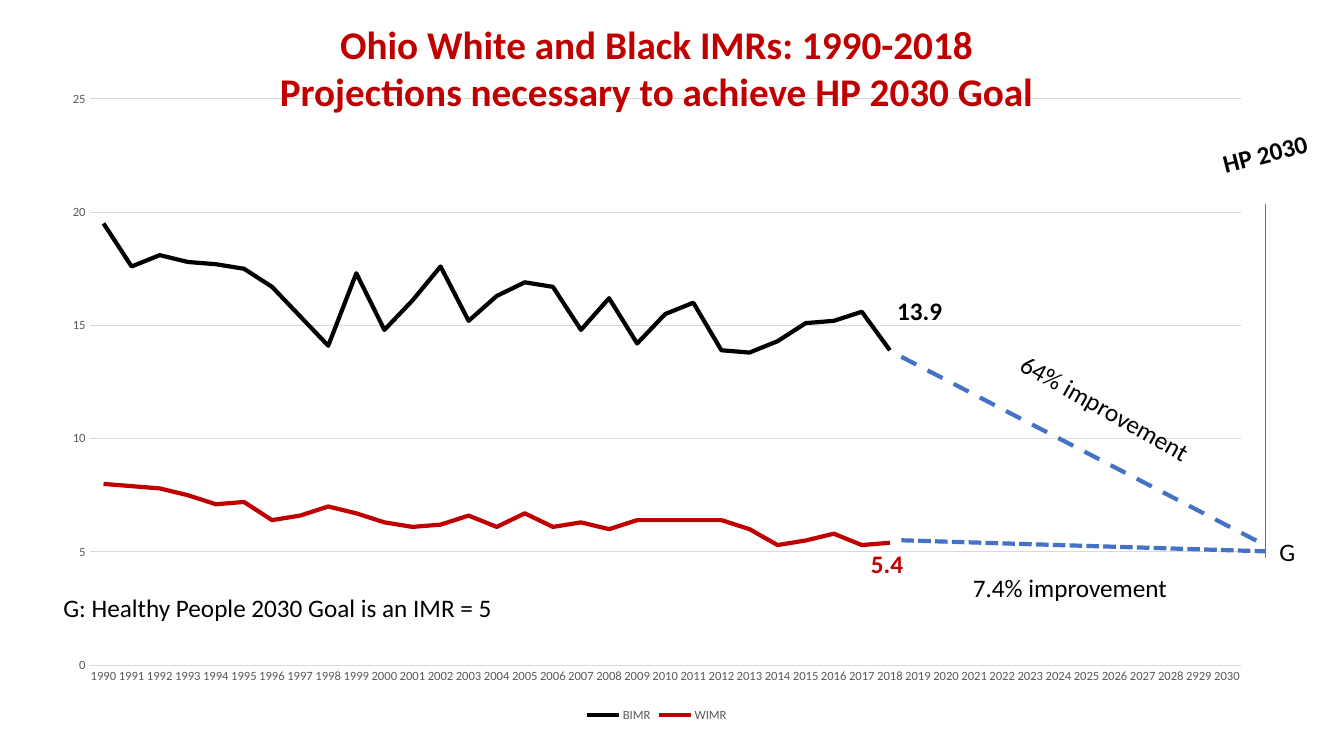
from lxml import etree
from pptx import Presentation
from pptx.chart.data import CategoryChartData
from pptx.dml.color import RGBColor
from pptx.enum.chart import XL_CHART_TYPE as Chart, XL_LEGEND_POSITION as Legend, XL_TICK_MARK as Tick
from pptx.enum.dml import MSO_LINE as Dash
from pptx.enum.shapes import MSO_CONNECTOR as Connector
from pptx.enum.text import MSO_AUTO_SIZE as Fit, PP_ALIGN as Align
from pptx.oxml.ns import qn
from pptx.util import Emu, Pt

PX = 9144
COLORS = {"black": "000000", "red": "C00000", "blue": "4472C4", "grid": "D9D9D9", "label": "595959"}
YEARS = [str(y) if y != 2029 else "2929" for y in range(1990, 2031)]
GOAL = 5
BLACK_IMR = [19.5, 17.6, 18.1, 17.8, 17.7, 17.5, 16.7, 15.4, 14.1, 17.3,
             14.8, 16.1, 17.6, 15.2, 16.3, 16.9, 16.7, 14.8, 16.2, 14.2,
             15.5, 16, 13.9, 13.8, 14.3, 15.1, 15.2, 15.6, 13.9]
WHITE_IMR = [8, 7.9, 7.8, 7.5, 7.1, 7.2, 6.4, 6.6, 7, 6.7,
             6.3, 6.1, 6.2, 6.6, 6.1, 6.7, 6.1, 6.3, 6, 6.4,
             6.4, 6.4, 6.4, 6, 5.3, 5.5, 5.8, 5.3, 5.4]


class Deck:
    font = "Calibri"

    def __init__(self, width, height):
        self.prs = Presentation()
        self.prs.slide_width, self.prs.slide_height = self.px(width, height)
        self.s = self.prs.slides.add_slide(self.prs.slide_layouts[6])

    def px(self, *lengths):
        return [Emu(n * PX) for n in lengths]

    def rgb(self, name):
        return RGBColor.from_string(COLORS[name])

    def style_font(self, font, size, color, bold=False):
        font.name, font.size, font.bold = self.font, Pt(size), bold
        font.color.rgb = self.rgb(color)

    def style_line(self, line, color, width, dash=None):
        line.color.rgb, line.width = self.rgb(color), Pt(width)
        if dash:
            line.dash_style = dash

    def text(self, box, *lines, size=18, color="black", bold=False, align=Align.LEFT, rotation=0):
        sp = self.s.shapes.add_textbox(*self.px(*box))
        sp.rotation = rotation
        tf = sp.text_frame
        tf.word_wrap, tf.auto_size = False, Fit.SHAPE_TO_FIT_TEXT
        for i, line in enumerate(lines):
            p = tf.add_paragraph() if i else tf.paragraphs[0]
            p.text, p.alignment = line, align
            self.style_font(p.font, size, color, bold)

    def line(self, ends, width, dash=None):
        sp = self.s.shapes.add_connector(Connector.STRAIGHT, *self.px(*ends))
        self.style_line(sp.line, "blue", width, dash)
        etree.SubElement(sp._element.spPr, qn("a:effectLst"))

    def line_chart(self, box, categories, series):
        data = CategoryChartData()
        data.categories = categories
        for name, values, _ in series:
            data.add_series(name, values)
        chart = self.s.shapes.add_chart(Chart.LINE, *self.px(*box), data).chart
        chart.has_title = False
        self.style_font(chart.font, 10, "black")
        chart.has_legend = True
        chart.legend.position, chart.legend.include_in_layout = Legend.BOTTOM, False
        self.style_font(chart.legend.font, 9, "label")
        for axis in (chart.category_axis, chart.value_axis):
            axis.major_tick_mark = axis.minor_tick_mark = Tick.NONE
            self.style_font(axis.tick_labels.font, 9, "label")
        self.style_line(chart.category_axis.format.line, "grid", 0.75)
        for body in chart._chartSpace.xpath(".//c:catAx/c:txPr/a:bodyPr"):
            body.set("rot", "-60000000")
        axis = chart.value_axis
        axis.minimum_scale, axis.maximum_scale, axis.major_unit = 0, 25, 5
        axis.format.line.fill.background()
        self.style_line(axis.major_gridlines.format.line, "grid", 0.75)
        plot = chart.plots[0]
        plot.vary_by_categories = False
        for ser, (_, _, color) in zip(plot.series, series):
            ser.smooth = False
            self.style_line(ser.format.line, color, 3)


def main():
    deck = Deck(1333, 750)
    gap = [None] * (len(YEARS) - len(BLACK_IMR) - 1)
    deck.line_chart((48, 78, 1207, 643), YEARS, [
        ("BIMR", BLACK_IMR + gap + [GOAL], "black"),
        ("WIMR", WHITE_IMR + gap + [GOAL], "red"),
    ])
    deck.text((1259, 527, 36, 40), "G")
    deck.line((1255, 202, 1255, 554), 0.5)
    deck.text((1202, 132, 106, 40), "HP 2030", bold=True, rotation=345.6)
    deck.text((53, 583, 450, 71), "G: Healthy People 2030 Goal is an IMR = 5")
    deck.line((894, 354, 1255, 541), 3, Dash.DASH)
    deck.line((894, 536, 1255, 547), 3, Dash.SQUARE_DOT)
    deck.text((263, 15, 776, 104), "Ohio White and Black IMRs: 1990-2018",
              "Projections necessary to achieve HP 2030 Goal",
              size=28, color="red", bold=True, align=Align.CENTER)
    deck.text((880, 288, 65, 40), "13.9", bold=True)
    deck.text((854, 539, 52, 40), "5.4", color="red", bold=True)
    deck.text((993, 385, 209, 40), "64% improvement", rotation=29.4)
    deck.text((955, 563, 215, 40), "7.4% improvement")
    deck.prs.save("out.pptx")


if __name__ == "__main__":
    main()
